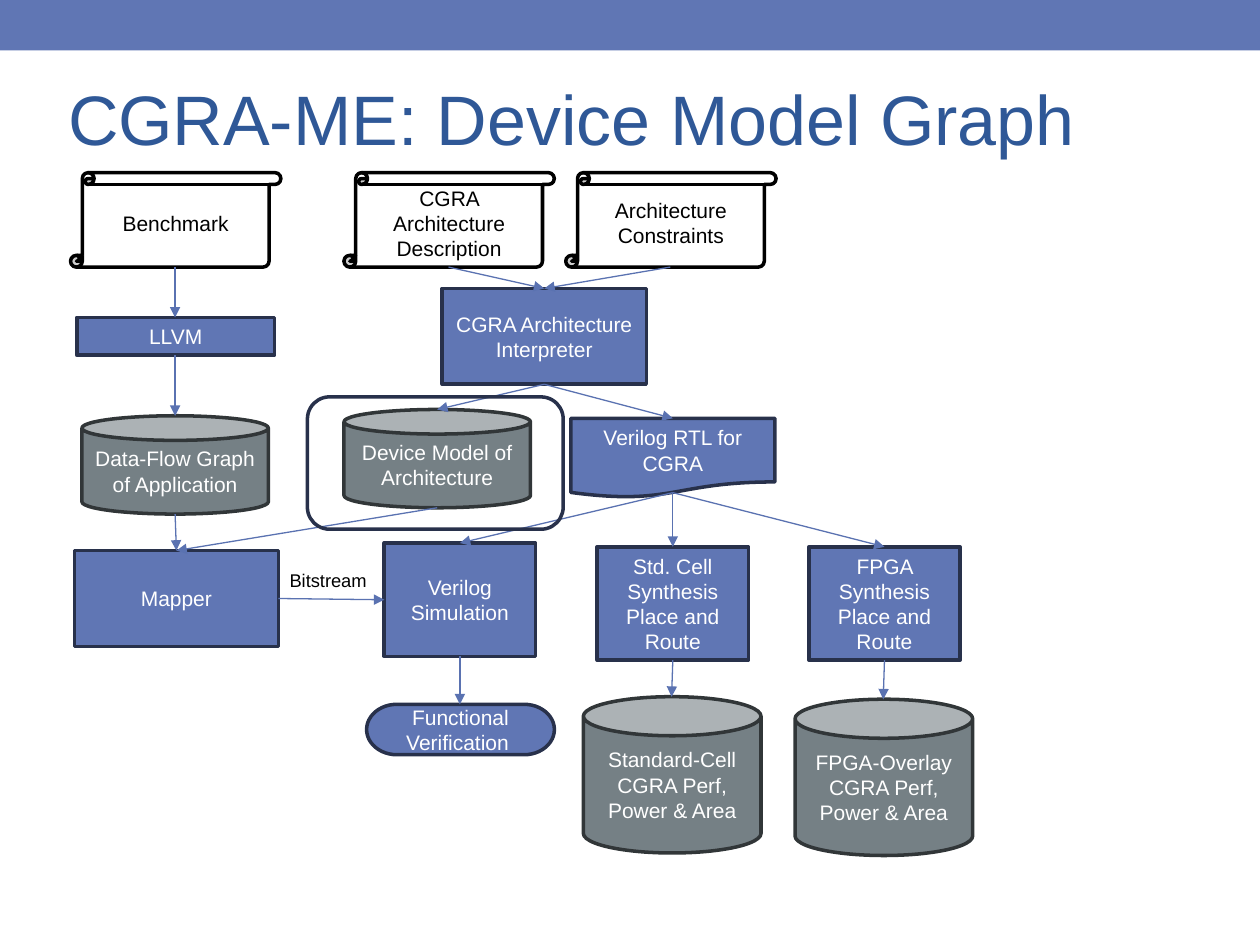
from dataclasses import dataclass

from lxml import etree
from pptx import Presentation, util as u
from pptx.dml.color import RGBColor
from pptx.enum import shapes, text
from pptx.oxml.ns import qn

PX = 9144  # EMU in one px, at 100 px to the inch
FONT = "Arial"

WHITE = RGBColor(0xFF, 0xFF, 0xFF)
BLACK = RGBColor(0x00, 0x00, 0x00)
BLUE = RGBColor(0x60, 0x76, 0xB4)
NAVY = RGBColor(0x28, 0x31, 0x4B)
GRAY = RGBColor(0x75, 0x80, 0x85)
DARK_GRAY = RGBColor(0x31, 0x36, 0x38)
ARROW_BLUE = RGBColor(0x5A, 0x72, 0xB1)
TITLE_BLUE = RGBColor(0x2F, 0x58, 0x97)

Shape = shapes.MSO_SHAPE
Point = tuple[int, int]


@dataclass(frozen=True)
class Style:
    fill: RGBColor
    line: RGBColor
    font: RGBColor


INPUT = Style(WHITE, BLACK, BLACK)
STEP = Style(BLUE, NAVY, WHITE)
STORE = Style(GRAY, DARK_GRAY, WHITE)


@dataclass(frozen=True)
class Node:
    label: str
    left: int
    top: int
    width: int
    height: int
    style: Style = STEP
    kind: Shape = Shape.RECTANGLE
    dent: int = 0  # how far the outline rises at the middle of the bottom edge

    @property
    def head(self) -> Point:
        return self.left + self.width // 2, self.top

    @property
    def foot(self) -> Point:
        return self.left + self.width // 2, self.top + self.height - self.dent

    @property
    def left_side(self) -> Point:
        return self.left, self.top + self.height // 2

    @property
    def right_side(self) -> Point:
        return self.left + self.width, self.top + self.height // 2


def scroll(label: str, left: int) -> Node:
    return Node(label, left, 137, 167, 75, INPUT, Shape.VERTICAL_SCROLL)


def small_store(label: str, left: int, top: int) -> Node:
    return Node(label, left, top, 148, 78, STORE, Shape.CAN)


def large_store(label: str, left: int, top: int) -> Node:
    return Node(label, left, top, 141, 124, STORE, Shape.CAN)


BENCHMARK = scroll("Benchmark", 56)
DESCRIPTION = scroll("CGRA Architecture Description", 273)
CONSTRAINTS = scroll("Architecture Constraints", 449)
LLVM = Node("LLVM", 61, 252, 157, 30)
INTERPRETER = Node("CGRA Architecture Interpreter", 351, 229, 162, 76)
DATA_FLOW = small_store("Data-Flow Graph of Application", 65, 330)
DEVICE_MODEL = small_store("Device Model of Architecture", 273, 325)
RTL = Node("Verilog RTL for CGRA", 453, 332, 162, 63,
           kind=Shape.FLOWCHART_DOCUMENT, dent=4)
MAPPER = Node("Mapper", 59, 437, 162, 76, kind=Shape.FLOWCHART_PROCESS)
SIMULATION = Node("Verilog Simulation", 305, 431, 120, 90)
STD_CELL = Node("Std. Cell Synthesis Place and Route", 474, 434, 120, 90)
FPGA = Node("FPGA Synthesis Place and Route", 642, 434, 120, 90)
VERIFICATION = Node("Functional Verification ", 291, 559, 149, 40,
                    kind=Shape.FLOWCHART_TERMINATOR)
STD_CELL_RESULT = large_store("Standard-Cell CGRA Perf, Power & Area", 463, 553)
FPGA_RESULT = large_store("FPGA-Overlay CGRA Perf, Power & Area", 631, 555)

NODES = [
    BENCHMARK, DESCRIPTION, CONSTRAINTS, LLVM, INTERPRETER, DATA_FLOW,
    DEVICE_MODEL, RTL, MAPPER, SIMULATION, STD_CELL, FPGA, VERIFICATION,
    STD_CELL_RESULT, FPGA_RESULT,
]
DOWNWARD_FLOWS = [
    (BENCHMARK, LLVM),
    (LLVM, DATA_FLOW),
    (DATA_FLOW, MAPPER),
    (DESCRIPTION, INTERPRETER),
    (CONSTRAINTS, INTERPRETER),
    (INTERPRETER, DEVICE_MODEL),
    (INTERPRETER, RTL),
    (DEVICE_MODEL, MAPPER),
    (RTL, SIMULATION),
    (RTL, STD_CELL),
    (RTL, FPGA),
    (STD_CELL, STD_CELL_RESULT),
    (FPGA, FPGA_RESULT),
    (SIMULATION, VERIFICATION),
]


def px(*lengths: int) -> list[u.Emu]:
    return [u.Emu(length * PX) for length in lengths]


def write(frame, words: str, size: float, color: RGBColor,
          align=text.PP_ALIGN.LEFT, anchor=text.MSO_ANCHOR.MIDDLE) -> None:
    frame.word_wrap = True
    frame.vertical_anchor = anchor
    para = frame.paragraphs[0]
    para.alignment = align
    span = para.add_run()
    span.text = words
    span.font.name = FONT
    span.font.size = u.Pt(size)
    span.font.color.rgb = color


def add_title(page, words: str) -> None:
    title = page.shapes.title
    title.left, title.top, title.width, title.height = px(45, 31, 923, 125)
    frame = title.text_frame
    frame.auto_size = text.MSO_AUTO_SIZE.NONE
    frame.margin_left = frame.margin_right = u.Inches(0.09)
    write(frame, words, 40, TITLE_BLUE)


def add_top_bar(page) -> None:
    bar = page.shapes.add_shape(Shape.RECTANGLE, *px(0, 0, 1000, 40))
    bar.shadow.inherit = False
    bar.fill.solid()
    bar.fill.fore_color.rgb = BLUE
    bar.line.fill.background()


def add_node(page, node: Node) -> None:
    box = page.shapes.add_shape(
        node.kind, *px(node.left, node.top, node.width, node.height))
    box.shadow.inherit = False
    box.fill.solid()
    box.fill.fore_color.rgb = node.style.fill
    box.line.color.rgb = node.style.line
    box.line.width = u.Pt(2)
    write(box.text_frame, node.label, 12, node.style.font, text.PP_ALIGN.CENTER)


def add_arrow(page, start: Point, end: Point) -> None:
    arrow = page.shapes.add_connector(
        shapes.MSO_CONNECTOR.STRAIGHT, *px(*start, *end))
    arrow.line.color.rgb = ARROW_BLUE
    arrow.line.width = u.Pt(0.75)
    etree.SubElement(arrow.line._get_or_add_ln(), qn("a:tailEnd"), type="triangle")
    etree.SubElement(arrow._element.spPr, qn("a:effectLst"))


def add_highlight(page) -> None:
    """Frame the device model, the subject of the slide."""
    frame = page.shapes.add_shape(Shape.ROUNDED_RECTANGLE, *px(244, 315, 203, 105))
    frame.shadow.inherit = False
    frame.fill.background()
    frame.line.color.rgb = NAVY
    frame.line.width = u.Pt(2)


def main() -> None:
    deck = Presentation()
    deck.slide_width, deck.slide_height = px(1000, 750)
    page = deck.slides.add_slide(deck.slide_layouts.get_by_name("Title Only"))

    add_top_bar(page)
    add_title(page, "CGRA-ME: Device Model Graph")
    for node in NODES:
        add_node(page, node)
    for source, target in DOWNWARD_FLOWS:
        add_arrow(page, source.foot, target.head)
    add_arrow(page, MAPPER.right_side, SIMULATION.left_side)

    label = page.shapes.add_textbox(*px(220, 447, 85, 29))
    write(label.text_frame, "Bitstream", 10.5, BLACK, anchor=text.MSO_ANCHOR.TOP)
    add_highlight(page)

    deck.save("out.pptx")


if __name__ == "__main__":
    main()
